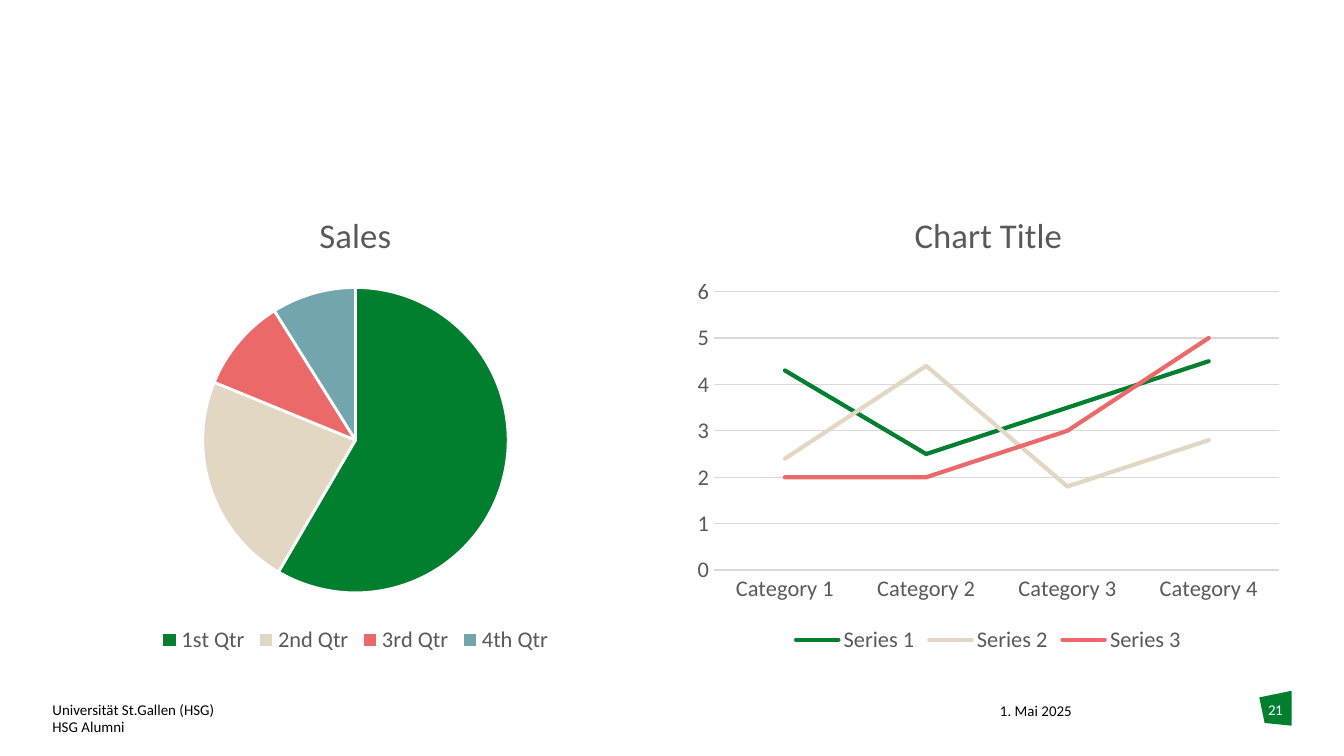
import dataclasses

import lxml.etree
import pptx
import pptx.chart.data
import pptx.dml.color
import pptx.enum.chart
import pptx.enum.text
import pptx.util

Inches = pptx.util.Inches
Pt = pptx.util.Pt
RGB = pptx.dml.color.RGBColor.from_string
XL = pptx.enum.chart


@dataclasses.dataclass(frozen=True)
class Theme:
    font: str = "Calibri"
    ink: str = "000000"
    white: str = "FFFFFF"
    grey: str = "595959"
    grid: str = "D9D9D9"
    accents: tuple = ("00802F", "E1D7C3", "EB6969", "73A5AF")
    small: float = 8
    label: float = 12
    title: float = 18.6


class Deck:
    """Holds the theme and the current slide and draws each kind of element."""

    def __init__(self, prs, theme):
        self.theme = theme
        self.s = prs.slides.add_slide(prs.slide_layouts[6])

    def style(self, font, size, color):
        font.name = self.theme.font
        font.size = Pt(size)
        font.bold = False
        font.color.rgb = RGB(color)

    def text(self, box, lines, color, align=pptx.enum.text.PP_ALIGN.LEFT, spacing=None):
        tf = self.s.shapes.add_textbox(*map(Inches, box)).text_frame
        tf.margin_left = tf.margin_top = tf.margin_right = tf.margin_bottom = 0
        tf.word_wrap = True
        p = tf.paragraphs[0]
        p.alignment = align
        for i, line in enumerate(lines):
            if i:
                p.add_line_break()
            r = p.add_run()
            r.text = line
            self.style(r.font, self.theme.small, color)
            if spacing is not None:
                r.font._element.set("spc", str(int(spacing * 100)))

    def outline(self, points, color):
        start, *rest = [tuple(map(Inches, point)) for point in points]
        builder = self.s.shapes.build_freeform(*start)
        builder.add_line_segments(rest, close=True)
        sp = builder.convert_to_shape()
        sp.shadow.inherit = False
        sp.fill.solid()
        sp.fill.fore_color.rgb = RGB(color)
        sp.line.fill.background()

    def chart(self, kind, box, title, cats, series):
        data = pptx.chart.data.CategoryChartData()
        data.categories = cats
        for name, values in series.items():
            data.add_series(name, values)
        chart = self.s.shapes.add_chart(kind, *map(Inches, box), data).chart
        self.style(chart.font, self.theme.label, self.theme.grey)
        chart.has_title = True
        r = chart.chart_title.text_frame.paragraphs[0].add_run()
        r.text = title
        self.style(r.font, self.theme.title, self.theme.grey)
        chart.chart_title.include_in_layout = False
        chart.has_legend = True
        chart.legend.position = XL.XL_LEGEND_POSITION.BOTTOM
        chart.legend.include_in_layout = False
        self.style(chart.legend.font, self.theme.label, self.theme.grey)
        return chart

    def pie(self, box, title, cats, series):
        chart = self.chart(XL.XL_CHART_TYPE.PIE, box, title, cats, series)
        plot = chart.plots[0]
        plot.vary_by_categories = True
        for i, color in enumerate(self.theme.accents):
            fmt = plot.series[0].points[i].format
            fmt.fill.solid()
            fmt.fill.fore_color.rgb = RGB(color)
            fmt.line.color.rgb = RGB(self.theme.white)
            fmt.line.width = Pt(1.5)

    def lines(self, box, title, cats, series):
        chart = self.chart(XL.XL_CHART_TYPE.LINE, box, title, cats, series)
        plot = chart.plots[0]
        plot.vary_by_categories = False
        for ser, color in zip(plot.series, self.theme.accents):
            ser.smooth = False
            ser.marker.style = XL.XL_MARKER_STYLE.NONE
            ser.format.line.color.rgb = RGB(color)
            ser.format.line.width = Pt(2.25)
            ln = ser.format.line._get_or_add_ln()
            ln.set("cap", "rnd")
            lxml.etree.SubElement(ln, pptx.oxml.ns.qn("a:round"))
        for axis in (chart.category_axis, chart.value_axis):
            axis.major_tick_mark = axis.minor_tick_mark = XL.XL_TICK_MARK.NONE
            self.style(axis.tick_labels.font, self.theme.label, self.theme.grey)
        value_axis = chart.value_axis
        value_axis.minimum_scale, value_axis.maximum_scale, value_axis.major_unit = 0, 6, 1
        value_axis.format.line.fill.background()
        value_axis.has_major_gridlines = True
        for part in (chart.category_axis, value_axis.major_gridlines):
            part.format.line.color.rgb = RGB(self.theme.grid)
            part.format.line.width = Pt(0.75)


def main():
    prs = pptx.Presentation()
    prs.slide_width = Inches(10)
    prs.slide_height = prs.slide_width * 9 // 16
    theme = Theme()
    deck = Deck(prs, theme)

    badge = [(9.37, 5.19), (9.61, 5.14), (9.61, 5.4), (9.41, 5.38)]
    deck.outline(badge, theme.accents[0])
    deck.text((7.44, 5.22, 1.29, 0.2), ["1. Mai 2025"], theme.ink)
    deck.text((0.39, 5.21, 2.81, 0.21), ["Universität St.Gallen (HSG)", "HSG Alumni"], theme.ink)

    left, top, width, height, gap = 0.39, 1.4, 4.51, 3.5, 0.2
    quarters = ["1st Qtr", "2nd Qtr", "3rd Qtr", "4th Qtr"]
    deck.pie((left, top, width, height), "Sales", quarters, {"Sales": (59, 23, 10, 9)})
    categories = [f"Category {n}" for n in range(1, 5)]
    series = {
        "Series 1": (4.3, 2.5, 3.5, 4.5),
        "Series 2": (2.4, 4.4, 1.8, 2.8),
        "Series 3": (2, 2, 3, 5),
    }
    deck.lines((left + width + gap, top, width, height), "Chart Title", categories, series)

    center = pptx.enum.text.PP_ALIGN.CENTER
    deck.text((9.37, 5.21, 0.24, 0.3), ["21"], theme.white, center, -0.3)
    prs.save("out.pptx")


if __name__ == "__main__":
    main()
